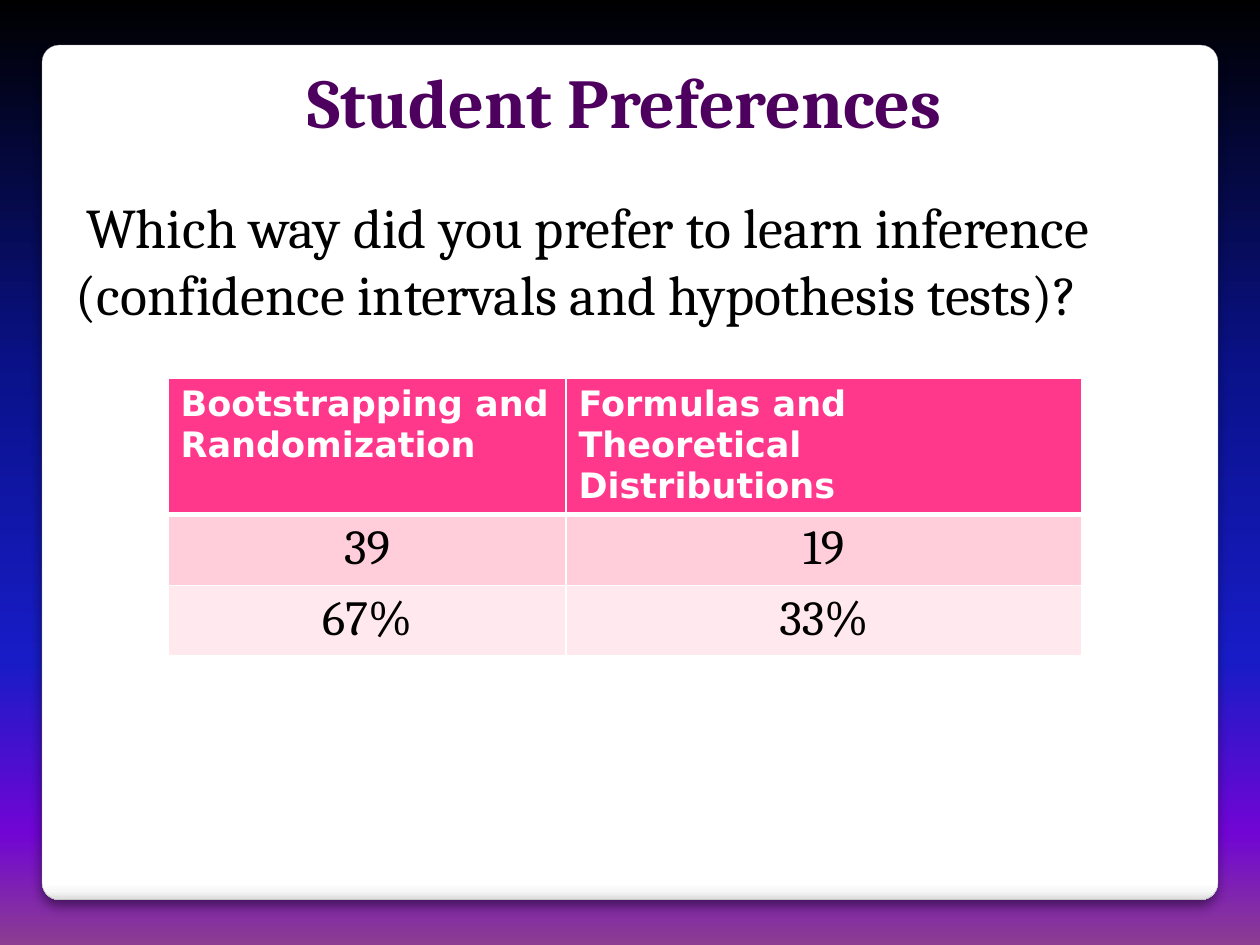
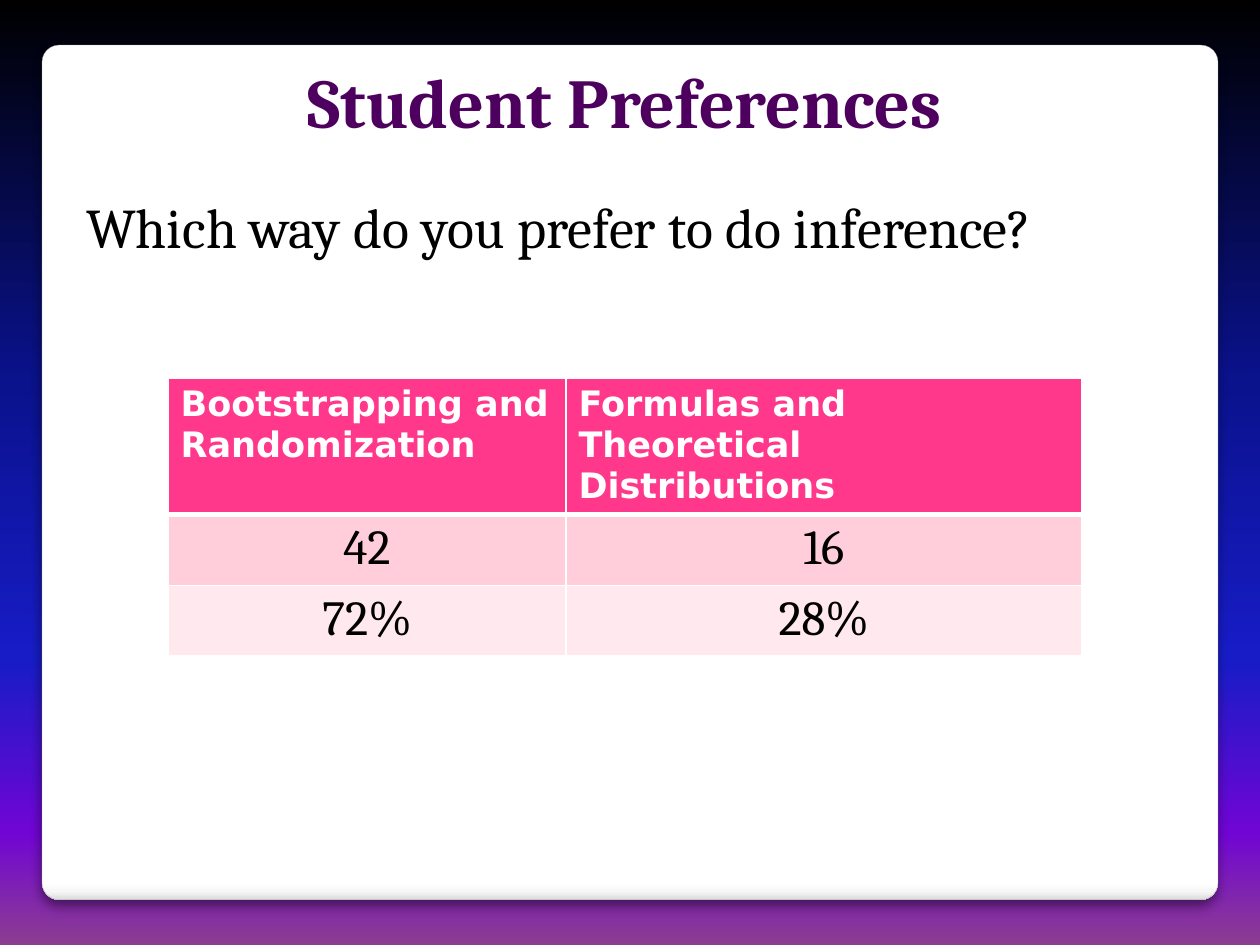
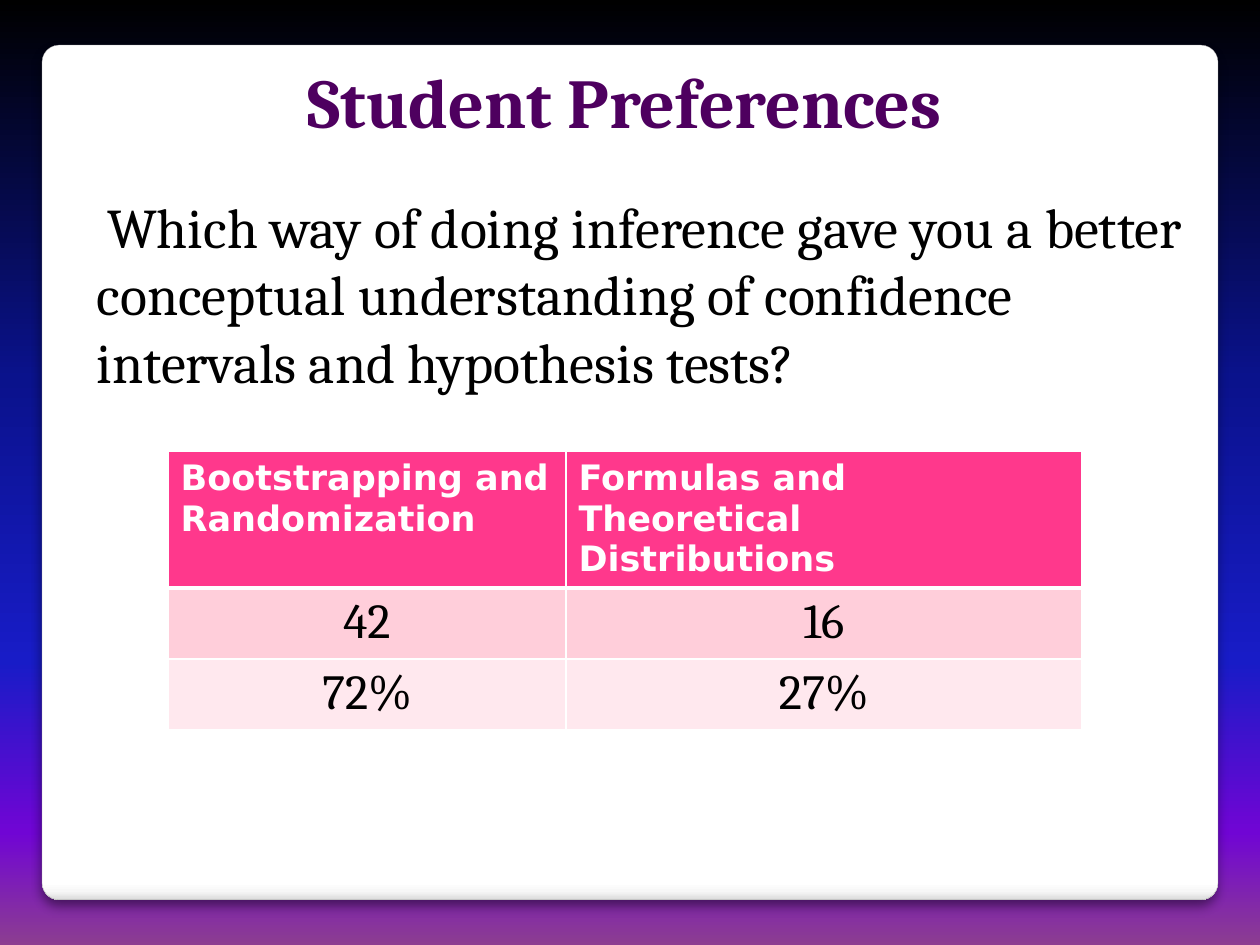
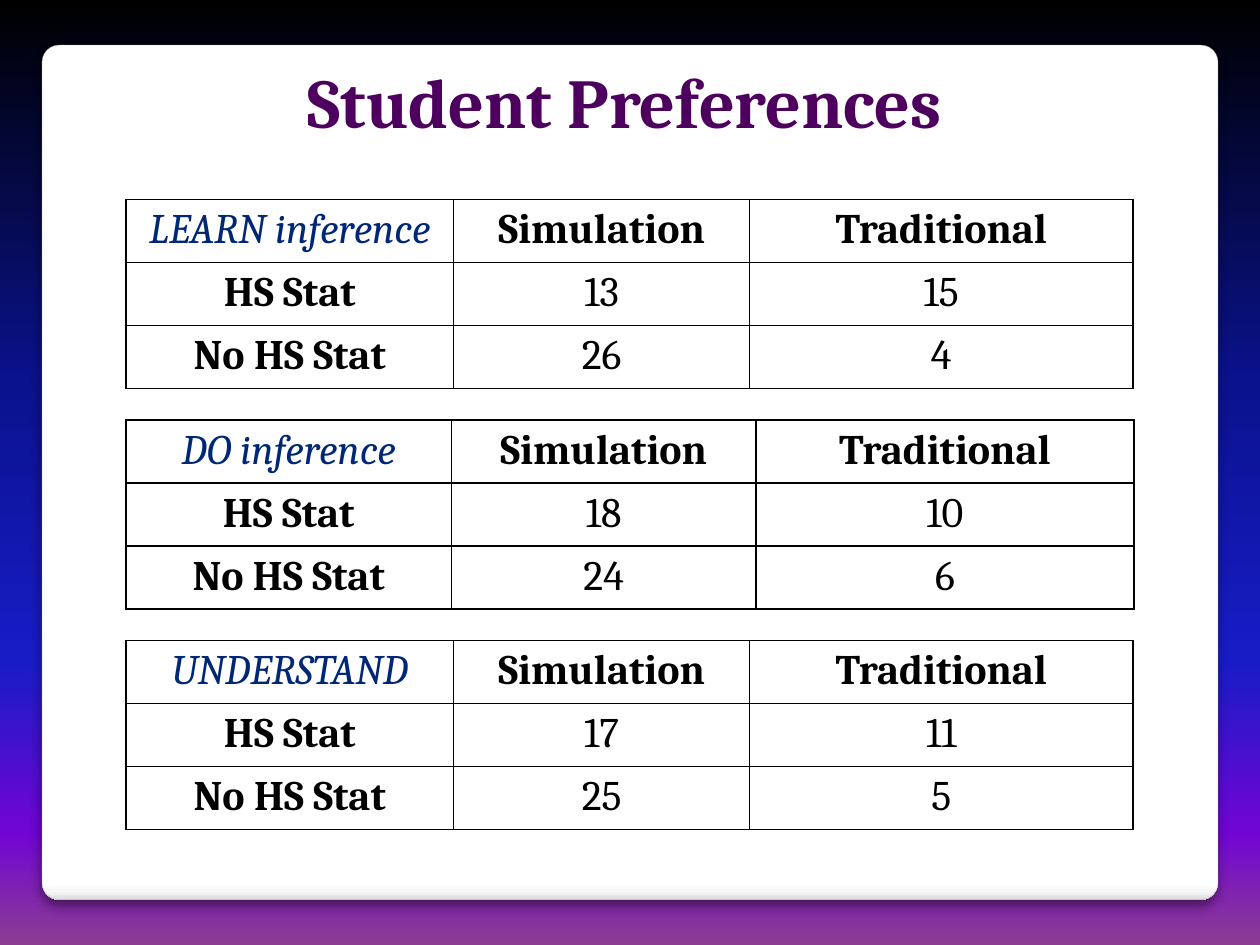
import lxml.etree
import pptx
import pptx.util
import pptx.dml.color
import pptx.enum.shapes
import pptx.enum.text
import pptx.oxml.ns

Pt = pptx.util.Pt
qn = pptx.oxml.ns.qn
sub = lxml.etree.SubElement
tint = pptx.dml.color.RGBColor.from_string
LEFT, MID = pptx.enum.text.PP_ALIGN.LEFT, pptx.enum.text.PP_ALIGN.CENTER

hues = {
    "ink": "000000", "paper": "FFFFFF", "title": "4E005F", "topic": "002776",
    "head": "FF388C", "odd": "FFCEDA", "even": "FFE8EE", "edge": "A4A4A4",
    "navy": "0A128C", "blue": "181CC7", "violet": "7005D4", "plum": "8C3D91",
    "mist": "F7F7F7", "ash": "DADADA",
}
sky = [(0, "ink"), (40, "navy"), (70, "blue"), (88, "violet"), (100, "plum")]
sheen = [(0, "paper"), (98, "paper"), (99, "mist"), (100, "ash")]


def write(frame, text, size=24, hue="ink", face="Cambria", bold=False, slant=False, side=MID):
    frame.word_wrap = True
    para = frame.paragraphs[0]
    para.alignment = side
    run = para.add_run()
    run.text = text
    font = run.font
    font.name, font.size, font.bold, font.italic = face, Pt(size), bold, slant
    font.color.rgb = tint(hues[hue])
    return para


def blend(fill, owner, stops):
    fill.gradient()
    fill.gradient_angle = 270
    ramp = owner.find(".//" + qn("a:gsLst"))
    ramp.clear()
    for share, hue in stops:
        stop = sub(ramp, qn("a:gs"), pos=str(share * 1000))
        sub(stop, qn("a:srgbClr"), val=hues[hue])


deck = pptx.Presentation()
deck.slide_width = pptx.util.Inches(10)
deck.slide_height = pptx.util.Inches(7.5)
unit = deck.slide_width / 120
master = deck.slide_master
blend(master.background.fill, master.element, sky)

heads = ["Bootstrapping and Randomization", "Formulas and Theoretical Distributions"]
polls = [
    ("Which way did you prefer to learn inference (confidence intervals and hypothesis tests)?",
     6, 39.8, 36, ["39", "19"], ["67%", "33%"]),
    ("Which way do you prefer to do inference?",
     6, 33.4, 36, ["42", "16"], ["72%", "28%"]),
    ("Which way of doing inference gave you a better conceptual understanding of "
     "confidence intervals and hypothesis tests?",
     8, 55.7, 43, ["42", "16"], ["72%", "27%"]),
]
topics = [
    ("LEARN inference", ["13", "15"], ["26", "4"], [31.2, 28.2, 36.5]),
    ("DO inference", ["18", "10"], ["24", "6"], [31, 29, 36]),
    ("UNDERSTAND", ["17", "11"], ["25", "5"], [31.2, 28.2, 36.5]),
]

pages = []
for ask, left, tall, top, counts, shares in polls:
    table = (16, top, [37.9, 49.1], [13, 6.75, 6.75], [heads, counts, shares])
    pages.append(((ask, left, tall), [table]))
grids = []
for step, (topic, some, none, widths) in enumerate(topics):
    rows = [[topic, "Simulation", "Traditional"], ["HS Stat"] + some, ["No HS Stat"] + none]
    grids.append((12, 19 + 21 * step, widths, [6, 6, 6], rows))
pages.append((None, grids))

for query, grids in pages:
    slide = deck.slides.add_slide(deck.slide_layouts[1 if query else 5])
    title = slide.shapes.title
    title.left, title.top, title.width, title.height = [int(n * unit) for n in (6, 5, 107, 16)]
    title.text_frame.vertical_anchor = pptx.enum.text.MSO_ANCHOR.TOP
    write(title.text_frame, "Student Preferences", size=40, hue="title", bold=True)

    if query:
        ask, left, tall = query
        body = slide.placeholders[1]
        body.left, body.top, body.width, body.height = [int(n * unit) for n in (left, 17.75, 107, tall)]
        body.text_frame.auto_size = pptx.enum.text.MSO_AUTO_SIZE.NONE
        para = write(body.text_frame, ask, size=32, side=LEFT)
        para.space_before, para.space_after = Pt(0), Pt(18)
        props = body.element.find(".//" + qn("a:pPr"))
        props.set("marL", "0")
        props.set("indent", str(int(unit)))
        sub(props, qn("a:buNone"))

    for left, top, widths, heights, rows in grids:
        box = [int(n * unit) for n in (left, top, sum(widths), sum(heights))]
        table = slide.shapes.add_table(len(rows), len(widths), *box).table
        table.first_row = table.horz_banding = False
        for col, width in zip(table.columns, widths):
            col.width = int(width * unit)
        for row, height in zip(table.rows, heights):
            row.height = int(height * unit)
        for y, row in enumerate(rows):
            for x, text in enumerate(row):
                cell = table.cell(y, x)
                if query:
                    fill, line = ["head", "odd", "even"][y], "paper"
                    look = dict(size=28)
                    if y == 0:
                        look = dict(size=20, hue="paper", face="DejaVu Sans", bold=True, side=LEFT)
                else:
                    fill, line = "paper", "ink"
                    look = dict(bold=x == 0 or y == 0)
                    if x == y == 0:
                        look = dict(hue="topic", slant=True)
                write(cell.text_frame, text, **look)
                cell.fill.solid()
                cell.fill.fore_color.rgb = tint(hues[fill])
                props = cell.text_frame._txBody.getparent().find(qn("a:tcPr"))
                for spot, side in enumerate("LRTB"):
                    thick = query and (y, side) in [(0, "B"), (1, "T")]
                    rule = lxml.etree.Element(qn("a:ln" + side), w=str(Pt(3 if thick else 1)))
                    sub(sub(rule, qn("a:solidFill")), qn("a:srgbClr"), val=hues[line])
                    props.insert(spot, rule)

rounded = pptx.enum.shapes.MSO_SHAPE.ROUNDED_RECTANGLE
card = slide.shapes.add_shape(rounded, *[int(n * unit) for n in (4, 4.3, 112, 81.4)])
card.adjustments[0] = 0.02
blend(card.fill, card.element, sheen)
card.line.color.rgb = tint(hues["edge"])
card.line.width = Pt(0.16)
card.shadow.inherit = False
glow = sub(card.element.find(".//" + qn("a:effectLst")), qn("a:outerShdw"),
           blurRad=str(Pt(6)), dist=str(Pt(4)), dir="5400000", rotWithShape="0")
sub(sub(glow, qn("a:srgbClr"), val=hues["ink"]), qn("a:alpha"), val="45000")
card.element.find(".//" + qn("p:cNvPr")).set("id", "20")
master.shapes.element.insert(2, card.element)

deck.save("out.pptx")
